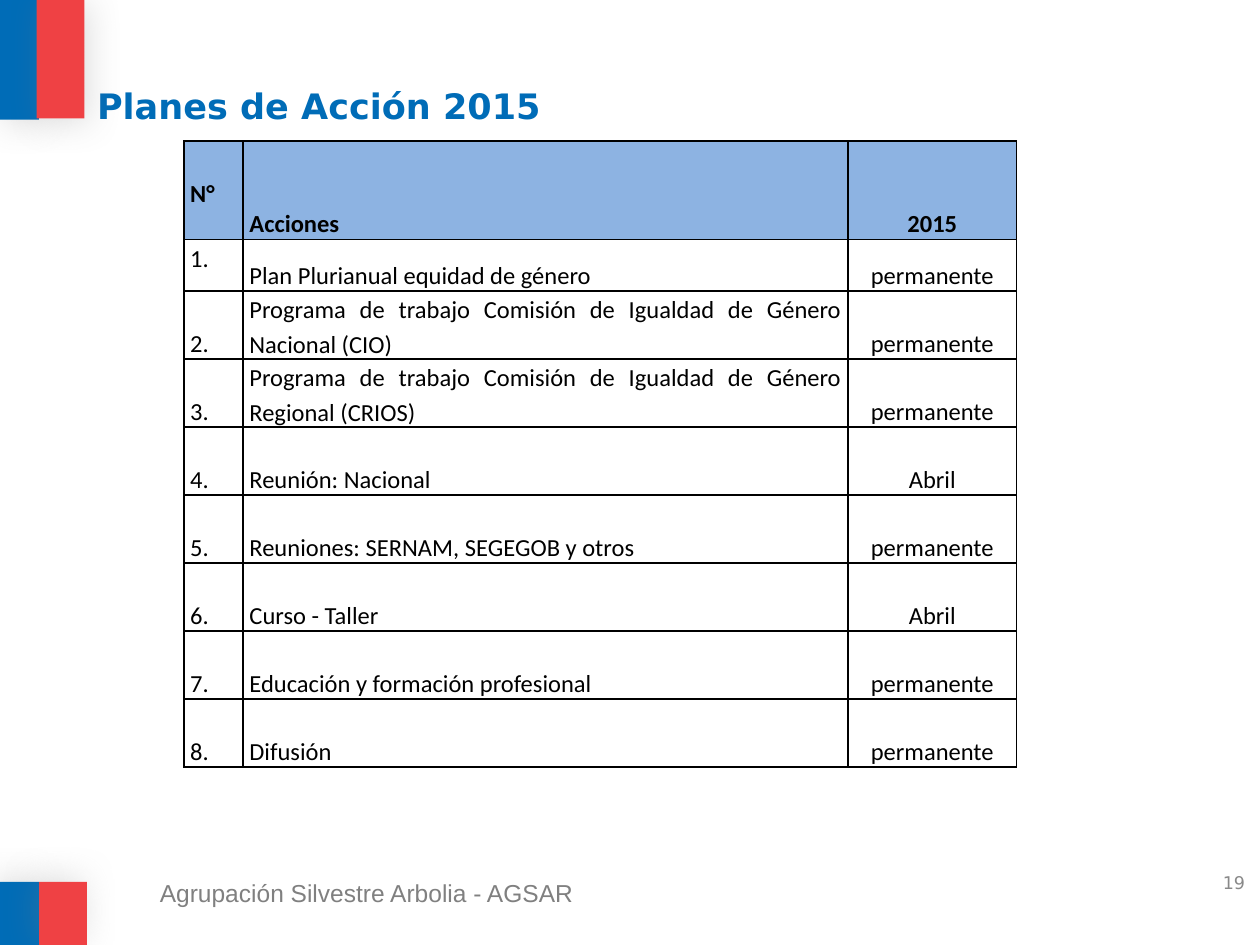
from lxml.etree import SubElement as Sub
from pptx import Presentation
from pptx.dml.color import RGBColor as RGB
from pptx.enum.shapes import MSO_SHAPE as Shape
from pptx.enum.text import MSO_ANCHOR as Anchor, PP_ALIGN as Align
from pptx.oxml.ns import qn
from pptx.util import Inches, Pt

THEME = {
    "blue": "006CB7", "red": "EF4144", "head": "8DB3E2", "ink": "000000",
    "shade": "808080", "foot": "808080", "page": "898989",
    "sans": "DejaVu Sans", "body": "Calibri", "plain": "Arial",
    "title": 20, "text": 14, "small": 10,
}
TITLE = "Planes de Acción 2015"
FOOT = "Agrupación Silvestre Arbolia - AGSAR"
PAGE = "19"
HEAD = ("N°", "Acciones", "2015")
PLANS = [
    ("Plan Plurianual equidad de género", "permanente"),
    ("Programa de trabajo Comisión de Igualdad de Género Nacional (CIO)", "permanente"),
    ("Programa de trabajo Comisión de Igualdad de Género Regional (CRIOS)", "permanente"),
    ("Reunión: Nacional", "Abril"),
    ("Reuniones: SERNAM, SEGEGOB y otros", "permanente"),
    ("Curso - Taller", "Abril"),
    ("Educación y formación profesional", "permanente"),
    ("Difusión", "permanente"),
]
BARS = [
    ((0, 0, 0.31, 0.95), "blue", 45),
    ((0.29, 0, 0.38, 0.94), "red", 45),
    ((0, 7, 0.31, 0.5), "blue", 215),
    ((0.31, 7, 0.38, 0.5), "red", 215),
]
COLS = (0.47, 4.8, 1.34)
ROWS = [0.78, 0.41] + [0.54] * (len(PLANS) - 1)


def tint(name):
    return RGB.from_string(THEME[name])


def place(item, box):
    item.left, item.top, item.width, item.height = map(Inches, box)


def style(para, face, size, color, bold=False, align=Align.LEFT):
    font = para.font
    font.name, font.size, font.bold = THEME[face], Pt(THEME[size]), bold
    font.color.rgb = tint(color)
    para.alignment = align


def bar(slide, box, color, angle):
    shape = slide.shapes.add_shape(Shape.RECTANGLE, *map(Inches, box))
    shape.fill.solid()
    shape.fill.fore_color.rgb = tint(color)
    shape.line.fill.background()
    shape.shadow.inherit = False
    effects = shape._element.spPr.find(qn("a:effectLst"))
    glow = Sub(effects, qn("a:outerShdw"), blurRad=str(Pt(20)), dist=str(Pt(3)),
               dir=str(angle * 60000), algn="ctr", rotWithShape="0")
    shade = Sub(glow, qn("a:srgbClr"), val=THEME["shade"])
    Sub(shade, qn("a:alpha"), val="25000")


def label(slide, text, box, look, anchor):
    frame = slide.shapes.add_textbox(*map(Inches, box)).text_frame
    frame.word_wrap = True
    frame.vertical_anchor = anchor
    frame.text = text
    style(frame.paragraphs[0], **look)


def edge(cell):
    props = cell._tc.get_or_add_tcPr()
    for side in ("lnL", "lnR", "lnT", "lnB"):
        line = Sub(props, qn(f"a:{side}"), w=str(Pt(1)))
        fill = Sub(line, qn("a:solidFill"))
        Sub(fill, qn("a:srgbClr"), val=THEME["ink"])


def write(cell, text, row, col):
    edge(cell)
    if row == 0:
        cell.fill.solid()
        cell.fill.fore_color.rgb = tint("head")
    else:
        cell.fill.background()
    cell.margin_left = cell.margin_right = Inches(0.05)
    cell.margin_top = cell.margin_bottom = 0
    cell.vertical_anchor = Anchor.BOTTOM
    if col == 0 and row < 2:
        cell.vertical_anchor = Anchor.TOP
        cell.margin_top = Inches(0.27 if row == 0 else 0)
    cell.text = text
    para = cell.text_frame.paragraphs[0]
    para.line_spacing = 1.15
    middle = Align.JUSTIFY if row else Align.LEFT
    align = (Align.LEFT, middle, Align.CENTER)[col]
    style(para, "body", "text", "ink", row == 0, align)


def grid(slide):
    data = [HEAD] + [(f"{n}.", *plan) for n, plan in enumerate(PLANS, 1)]
    box = (1.46, 1.12, sum(COLS), sum(ROWS))
    table = slide.shapes.add_table(len(data), len(COLS), *map(Inches, box)).table
    for col, width in zip(table.columns, COLS):
        col.width = Inches(width)
    for row, tall in zip(table.rows, ROWS):
        row.height = Inches(tall)
    for r, line in enumerate(data):
        for c, text in enumerate(line):
            write(table.cell(r, c), text, r, c)


def main():
    deck = Presentation()
    deck.slide_width, deck.slide_height = Inches(10), Inches(7.5)
    slide = deck.slides.add_slide(deck.slide_layouts[5])
    for item in BARS:
        bar(slide, *item)
    label(slide, FOOT, (1.17, 6.92, 8, 0.33),
          dict(face="plain", size="text", color="foot"), Anchor.TOP)
    title = slide.shapes.title
    place(title, (0.67, 0.62, 9.61, 0.94))
    title.text_frame.text = TITLE
    title.text_frame.vertical_anchor = Anchor.TOP
    style(title.text_frame.paragraphs[0], "sans", "title", "blue", True)
    label(slide, PAGE, (7.65, 6.9, 2.33, 0.21),
          dict(face="sans", size="small", color="page", align=Align.RIGHT),
          Anchor.MIDDLE)
    grid(slide)
    deck.save("out.pptx")


if __name__ == "__main__":
    main()
